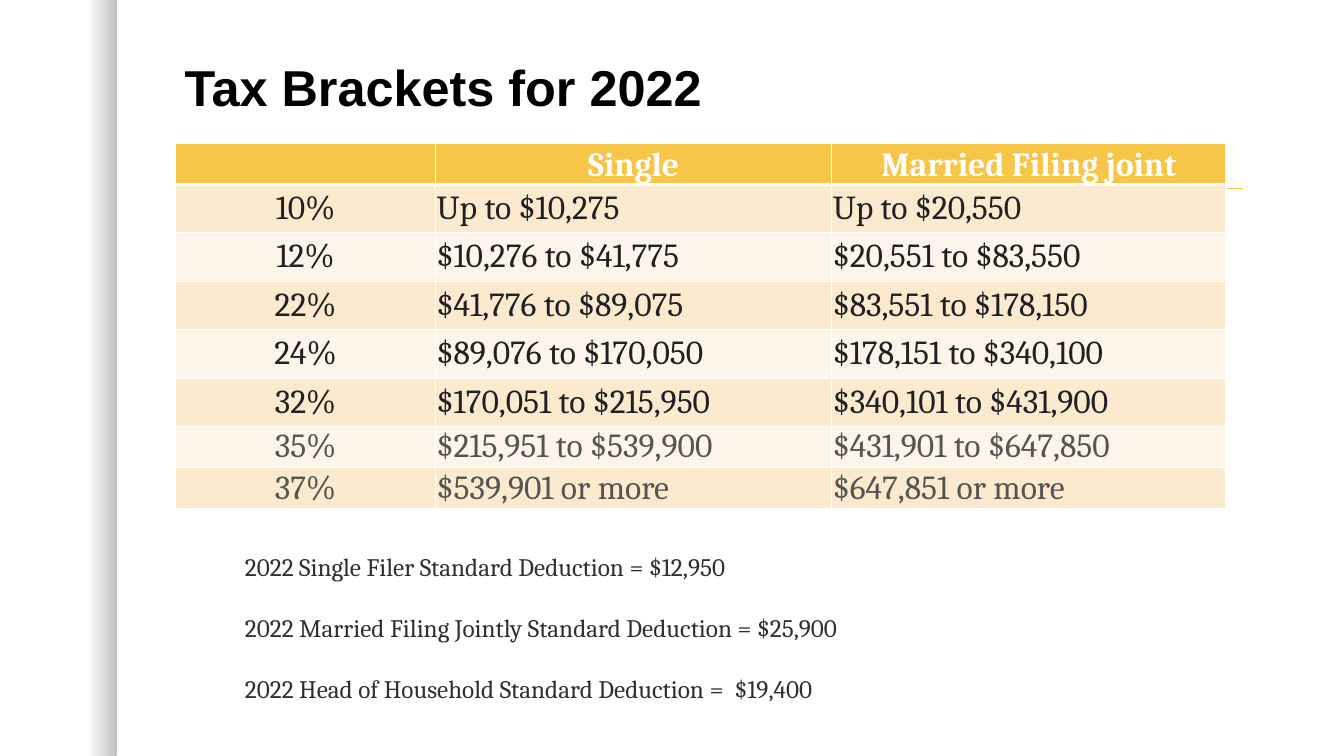
from dataclasses import dataclass
from lxml import etree
from pptx import Presentation
from pptx.dml.color import RGBColor
from pptx.enum.shapes import MSO_CONNECTOR, MSO_SHAPE
from pptx.enum.text import MSO_ANCHOR, MSO_AUTO_SIZE, PP_ALIGN
from pptx.oxml.ns import qn
from pptx.util import Inches, Pt

RECT, STRAIGHT = MSO_SHAPE.RECTANGLE, MSO_CONNECTOR.STRAIGHT
TOP, MIDDLE, BOTTOM = MSO_ANCHOR.TOP, MSO_ANCHOR.MIDDLE, MSO_ANCHOR.BOTTOM
LEFT, CENTER = PP_ALIGN.LEFT, PP_ALIGN.CENTER
NO_FIT = MSO_AUTO_SIZE.NONE

TITLE = "Tax Brackets for 2022"
HEADER = ("", "Single", "Married Filing joint")
BRACKETS = [
    ("10%", "Up to $10,275", "Up to $20,550"),
    ("12%", "$10,276 to $41,775", "$20,551 to $83,550"),
    ("22%", "$41,776 to $89,075", "$83,551 to $178,150"),
    ("24%", "$89,076 to $170,050", "$178,151 to $340,100"),
    ("32%", "$170,051 to $215,950", "$340,101 to $431,900"),
    ("35%", "$215,951 to $539,900", "$431,901 to $647,850"),
    ("37%", "$539,901 or more", "$647,851 or more"),
]
DEDUCTIONS = [
    "2022 Single Filer Standard Deduction = $12,950",
    "2022 Married Filing Jointly Standard Deduction = $25,900",
    "2022 Head of Household Standard Deduction =  $19,400",
]

SLIDE_W, SLIDE_H = 13.33, 7.5
COLS = (2.58, 3.93, 3.91)
HEADER_H, TALL_H, SHORT_H = 0.41, 0.48, 0.41
TALL_ROWS = 5


@dataclass(frozen=True)
class Theme:
    head_font: str = "Arial"
    body_font: str = "Cambria"
    title_size: int = 36
    table_size: int = 24
    note_size: int = 18
    note_gap: int = 22
    black: str = "000000"
    white: str = "FFFFFF"
    gold: str = "F7C547"
    bands: tuple = ("FCEACF", "FDF5E9")
    ink: str = "202124"
    soft_ink: str = "555555"
    note_ink: str = "303030"


T = Theme()


def rgb(code):
    return RGBColor.from_string(code)


def style(p, font, size, color, bold=False):
    for r in p.runs:
        r.font.name, r.font.size, r.font.bold = font, Pt(size), bold
        r.font.color.rgb = rgb(color)


def place(sp, left, top, width, height):
    sp.left, sp.top = Inches(left), Inches(top)
    sp.width, sp.height = Inches(width), Inches(height)


def add_edge_shade(slide):
    sp = slide.shapes.add_shape(RECT, 0, 0, Inches(1.16), Inches(SLIDE_H))
    sp.shadow.inherit = False
    sp.line.fill.background()
    sp.fill.gradient()
    sp.fill.gradient_angle = 0
    for stop, position in zip(sp.fill.gradient_stops, (0.75, 1)):
        stop.position = position
        stop.color.rgb = rgb(T.black)
    for color, alpha in zip(sp._element.iter(qn("a:srgbClr")), (0, 25)):
        etree.SubElement(color, qn("a:alpha"), val=str(alpha * 1000))


def add_rule(slide):
    line = slide.shapes.add_connector(
        STRAIGHT, Inches(1.81), Inches(1.87), Inches(12.33), Inches(1.87))
    line.line.color.rgb = rgb(T.gold)
    line.line.width = Pt(1)
    etree.SubElement(line._element.spPr, qn("a:effectLst"))


def fill_title(sp):
    place(sp, 1.83, 0.51, 10.92, 1.15)
    tf = sp.text_frame
    tf.text = TITLE
    tf.auto_size, tf.vertical_anchor = NO_FIT, TOP
    tf.margin_left = tf.margin_right = tf.margin_bottom = 0
    tf.margin_top = Inches(0.05)
    p = tf.paragraphs[0]
    p.alignment = LEFT
    style(p, T.head_font, T.title_size, T.black, True)


def fill_deductions(sp):
    place(sp, 2.33, 5.42, 9.92, 1.62)
    tf = sp.text_frame
    tf.text = "\n".join(DEDUCTIONS)
    tf.auto_size, tf.vertical_anchor = NO_FIT, TOP
    for i, p in enumerate(tf.paragraphs):
        pPr = p._p.get_or_add_pPr()
        pPr.set("marL", "0")
        pPr.set("indent", "0")
        etree.SubElement(pPr, qn("a:buNone"))
        p.space_before = Pt(T.note_gap if i else 0)
        style(p, T.body_font, T.note_size, T.note_ink)


def set_cell(cell, text, fill, color, size_pad, anchor, align, bold, bottom_width):
    cell.text = text
    cell.vertical_anchor = anchor
    cell.margin_left = cell.margin_right = Inches(0.01)
    cell.margin_top = cell.margin_bottom = Inches(size_pad)
    p = cell.text_frame.paragraphs[0]
    p.alignment = align
    style(p, T.body_font, T.table_size, color, bold)
    tcPr = cell._tc.get_or_add_tcPr()
    for side, width in (("L", 1), ("R", 1), ("T", 1), ("B", bottom_width)):
        ln = etree.SubElement(tcPr, qn(f"a:ln{side}"), w=str(Pt(width)))
        solid = etree.SubElement(ln, qn("a:solidFill"))
        etree.SubElement(solid, qn("a:srgbClr"), val=T.white)
    cell.fill.solid()
    cell.fill.fore_color.rgb = rgb(fill)


def add_brackets(slide):
    heights = [HEADER_H] + [
        TALL_H if i < TALL_ROWS else SHORT_H for i in range(len(BRACKETS))]
    table = slide.shapes.add_table(
        len(heights), len(COLS), Inches(1.74), Inches(1.42),
        Inches(sum(COLS)), Inches(sum(heights))).table
    for column, width in zip(table.columns, COLS):
        column.width = Inches(width)
    for row, height in zip(table.rows, heights):
        row.height = Inches(height)
    for c, text in enumerate(HEADER):
        set_cell(table.cell(0, c), text, T.gold, T.white, 0, BOTTOM, CENTER, True, 3)
    for i, bracket in enumerate(BRACKETS):
        tall = i < TALL_ROWS
        for c, text in enumerate(bracket):
            set_cell(table.cell(i + 1, c), text, T.bands[i % 2],
                     T.ink if tall else T.soft_ink, 0.04 if tall else 0,
                     MIDDLE, LEFT if c else CENTER, False, 1)


def main():
    prs = Presentation()
    prs.slide_width, prs.slide_height = Inches(SLIDE_W), Inches(SLIDE_H)
    slide = prs.slides.add_slide(prs.slide_layouts[1])
    add_edge_shade(slide)
    add_rule(slide)
    fill_title(slide.shapes.title)
    fill_deductions(slide.placeholders[1])
    add_brackets(slide)
    prs.save("out.pptx")


if __name__ == "__main__":
    main()
